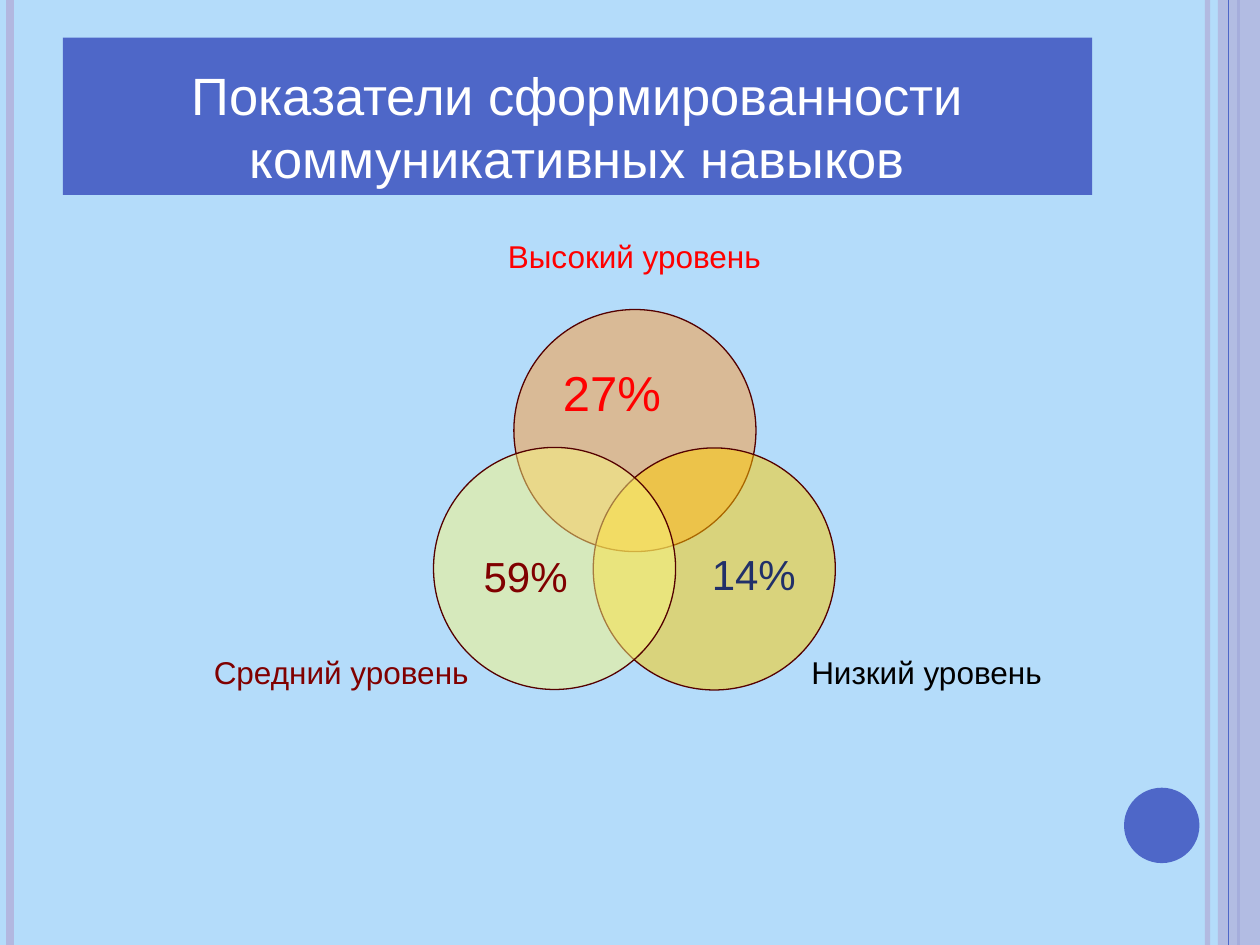
from lxml import etree
from pptx import Presentation
from pptx import util as u
from pptx.dml.color import RGBColor
from pptx.enum import shapes, text
from pptx.oxml.ns import qn


def paint(fill, color, alpha=100):
    """Make a fill solid in a hex colour, with alpha as percent of opacity."""
    fill.solid()
    fill.fore_color.rgb = RGBColor.from_string(color)
    if alpha < 100:
        tone = fill._xPr.find(qn("a:solidFill"))[0]
        etree.SubElement(tone, qn("a:alpha")).set("val", str(alpha * 1000))


def write(shape, words, size, color, align, anchor, wrap):
    frame = shape.text_frame
    frame.word_wrap = wrap
    frame.vertical_anchor = anchor
    para = frame.paragraphs[0]
    para.alignment = align
    run = para.add_run()
    run.text = words
    run.font.name = "Arial"
    run.font.size = u.Pt(size)
    paint(run.font.fill, color)
    return frame


deck = Presentation()
deck.slide_width, deck.slide_height = u.Cm(25.4), u.Cm(19.05)
slide = deck.slides.add_slide(deck.slide_layouts[6])
paint(slide.background.fill, "B4DCFA")
items = slide.shapes
left, center = text.PP_ALIGN.LEFT, text.PP_ALIGN.CENTER
top, middle, bottom = (text.MSO_ANCHOR.TOP, text.MSO_ANCHOR.MIDDLE,
                       text.MSO_ANCHOR.BOTTOM)
rect, oval = shapes.MSO_SHAPE.RECTANGLE, shapes.MSO_SHAPE.OVAL

# Side stripes, with the wide band under the last one
for x, color, width, alpha in [
    (24.34, "B2B8E0", 3, 93),
    (0.21, "B2B8E0", 4.5, 100),
    (24.97, "4E67C8", 1.5, 100),
    (24.77, "4E67C8", 0.75, 100),
]:
    if x == 24.77:
        band = items.add_shape(rect, u.Cm(24.55), 0, u.Cm(0.85), deck.slide_height)
        band.shadow.inherit = False
        paint(band.fill, "B2B8E0", 87)
        band.line.fill.background()
    line = items.add_connector(shapes.MSO_CONNECTOR.STRAIGHT,
                               u.Cm(x), 0, u.Cm(x), deck.slide_height)
    line.line.width = u.Pt(width)
    paint(line.line.fill, color, alpha)
    etree.SubElement(line._element.spPr, qn("a:effectLst"))

# Corner dot and title bar
for kind, x, y, w, h in [(oval, 22.66, 15.88, 1.52, 1.52),
                         (rect, 1.27, 0.76, 20.75, 3.17)]:
    title = items.add_shape(kind, u.Cm(x), u.Cm(y), u.Cm(w), u.Cm(h))
    title.shadow.inherit = False
    paint(title.fill, "4E67C8")
    title.line.fill.background()
write(title, "Показатели сформированности коммуникативных навыков",
      30, "FFFFFF", center, bottom, True)

# Venn circles with their labels; a plain rectangle keeps a label on one line
for x, y, color, name, tx, ty, ink in [
    (10.36, 6.24, "FF9933", "Высокий уровень", 11.04, 4.55, "FF0000"),
    (11.96, 9.03, "FFCC00", "Низкий уровень", 16.93, 12.94, "000000"),
    (8.74, 9.02, "F9F67F", "Средний уровень", 5.13, 12.94, "800000"),
]:
    ring = items.add_shape(oval, u.Cm(x), u.Cm(y), u.Cm(4.88), u.Cm(4.88))
    ring.shadow.inherit = False
    paint(ring.fill, color, 50)
    paint(ring.line.fill, "540000")
    ring.line.width = u.Pt(0.75)
    label = items.add_shape(rect, u.Cm(tx), u.Cm(ty), u.Cm(3.5), u.Cm(1.22))
    label.shadow.inherit = False
    label.fill.background()
    label.line.fill.background()
    frame = write(label, name, 18, ink, center, middle, False)
    frame.margin_left = frame.margin_right = 0
    frame.margin_top = frame.margin_bottom = 0

# Shares
for share, x, y, w, h, size, ink, wrap in [
    ("27%", 11.1, 7.19, 3.66, 1.45, 28, "FF0000", True),
    ("59%", 9.5, 10.97, 2.92, 1.27, 24, "800000", True),
    ("14%", 14.1, 10.93, 2.21, 1.27, 24, "213069", False),
]:
    box = items.add_textbox(u.Cm(x), u.Cm(y), u.Cm(w), u.Cm(h))
    frame = write(box, share, size, ink, left, top, wrap)
    frame.auto_size = text.MSO_AUTO_SIZE.SHAPE_TO_FIT_TEXT

deck.save("out.pptx")
